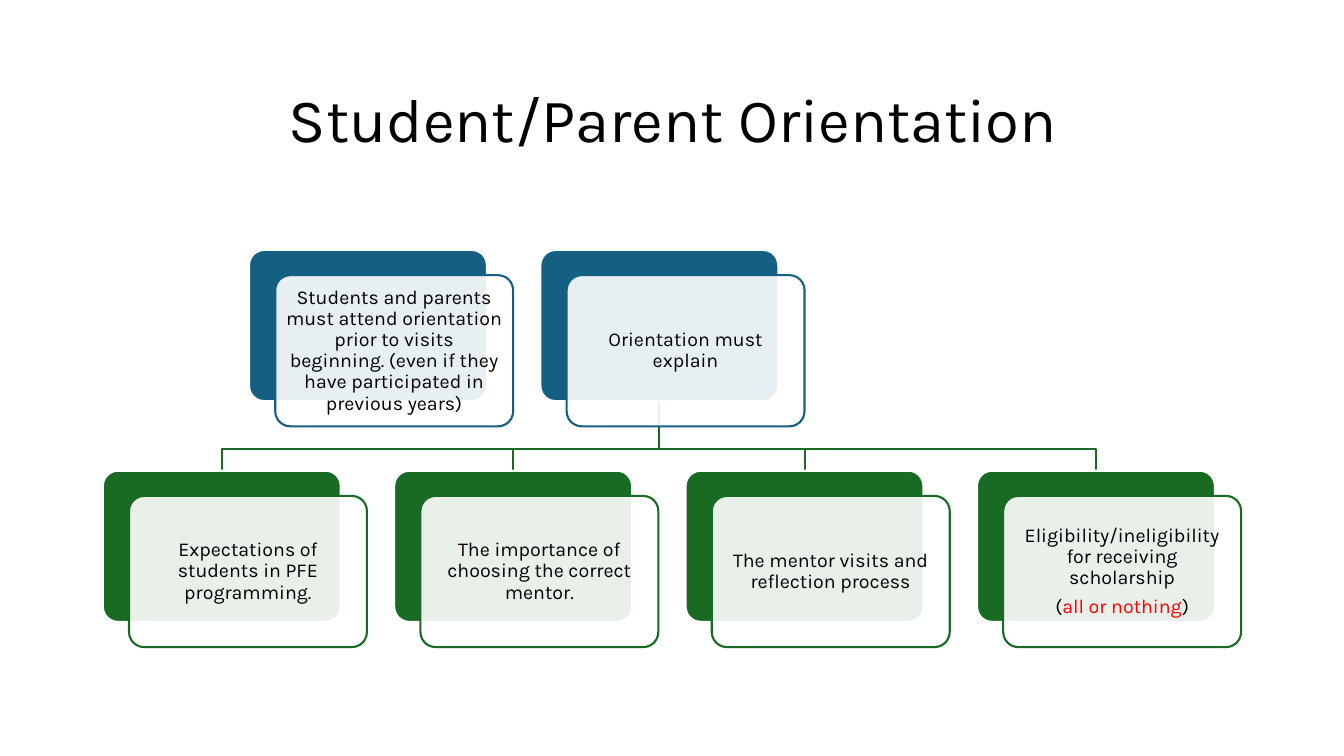
from pptx import Presentation
from pptx.dml.color import RGBColor
from pptx.enum.shapes import MSO_SHAPE
from pptx.enum.text import MSO_ANCHOR, PP_ALIGN
from pptx.oxml.ns import qn
from pptx.util import Inches, Pt
from lxml import etree

ROUND = MSO_SHAPE.ROUNDED_RECTANGLE
MIDDLE = MSO_ANCHOR.MIDDLE
CENTER = PP_ALIGN.CENTER

BLACK = RGBColor(0x00, 0x00, 0x00)
WHITE = RGBColor(0xFF, 0xFF, 0xFF)
BLUE = RGBColor(0x15, 0x60, 0x82)
GREEN = RGBColor(0x19, 0x6B, 0x24)
RED = RGBColor(0xFF, 0x00, 0x00)

FONT = "Karla"
CARD_W, CARD_H = 2.36, 1.5
PITCH = 2.89
TOP_X, TOP_Y = 2.47, 2.48
LOW_X, LOW_Y = 1.02, 4.67
BEND_Y = 4.45

# Each card is a list of paragraphs, each paragraph a list of (text, colour)
TOP_CARDS = [
    [[("Students and parents must attend orientation prior to visits "
       "beginning. (even if they have participated in previous years)", BLACK)]],
    [[("Orientation must explain", BLACK)]],
]
LOW_CARDS = [
    [[("Expectations of students in PFE programming.", BLACK)]],
    [[("The importance of choosing the correct mentor.", BLACK)]],
    [[("The mentor visits and reflection process", BLACK)]],
    [[("Eligibility/ineligibility for receiving scholarship", BLACK)],
     [("(", BLACK), ("all or nothing", RED), (")", BLACK)]],
]


def add_text(shape, paras, size, inset):
    frame = shape.text_frame
    frame.word_wrap = True
    frame.vertical_anchor = MIDDLE
    frame.margin_left = frame.margin_right = Inches(inset)
    frame.margin_top = frame.margin_bottom = Inches(inset)
    for i, runs in enumerate(paras):
        para = frame.add_paragraph() if i else frame.paragraphs[0]
        para.alignment = CENTER
        para.line_spacing = 0.9
        if i:
            para.space_before = Pt(5)
        for text, color in runs:
            run = para.add_run()
            run.text = text
            run.font.name = FONT
            run.font.size = Pt(size)
            run.font.color.rgb = color


def add_box(slide, x, y, fill, line):
    box = slide.shapes.add_shape(
        ROUND, Inches(x), Inches(y), Inches(CARD_W), Inches(CARD_H))
    box.adjustments[0] = 0.1
    box.shadow.inherit = False
    box.fill.solid()
    box.fill.fore_color.rgb = fill
    box.line.color.rgb = line
    box.line.width = Pt(1.5)
    return box


def add_card(slide, x, y, color, paras):
    add_box(slide, x, y, color, WHITE)
    panel = add_box(slide, x + 0.26, y + 0.25, WHITE, color)
    # Panel fill is 90% opaque
    tint = panel.fill._xPr.find(qn("a:solidFill"))[0]
    etree.SubElement(tint, qn("a:alpha")).set("val", "90000")
    add_text(panel, paras, 14, 0.06)


def add_link(slide, start, end):
    points = [(start, TOP_Y + CARD_H), (start, BEND_Y),
              (end, BEND_Y), (end, LOW_Y)]
    spots = [(Inches(x), Inches(y)) for x, y in points]
    path = slide.shapes.build_freeform(*spots[0])
    path.add_line_segments(spots[1:], close=False)
    link = path.convert_to_shape()
    link.shadow.inherit = False
    link.fill.background()
    link.line.color.rgb = GREEN
    link.line.width = Pt(1.5)


def main():
    deck = Presentation()
    deck.slide_width, deck.slide_height = Inches(13.33), Inches(7.5)
    slide = deck.slides.add_slide(deck.slide_layouts[6])

    # Title
    title = slide.shapes.add_textbox(
        Inches(1.67), Inches(0.6), Inches(10.02), Inches(1.24))
    add_text(title, [[("Student/Parent Orientation", BLACK)]], 44, 0.05)

    # Links from the second top card to every lower card
    half = CARD_W / 2
    for i in range(len(LOW_CARDS)):
        add_link(slide, TOP_X + PITCH + half, LOW_X + i * PITCH + half)

    # Rows of cards
    for left, top, color, cards in ((TOP_X, TOP_Y, BLUE, TOP_CARDS),
                                    (LOW_X, LOW_Y, GREEN, LOW_CARDS)):
        for i, paras in enumerate(cards):
            add_card(slide, left + i * PITCH, top, color, paras)

    deck.save("out.pptx")


if __name__ == "__main__":
    main()
